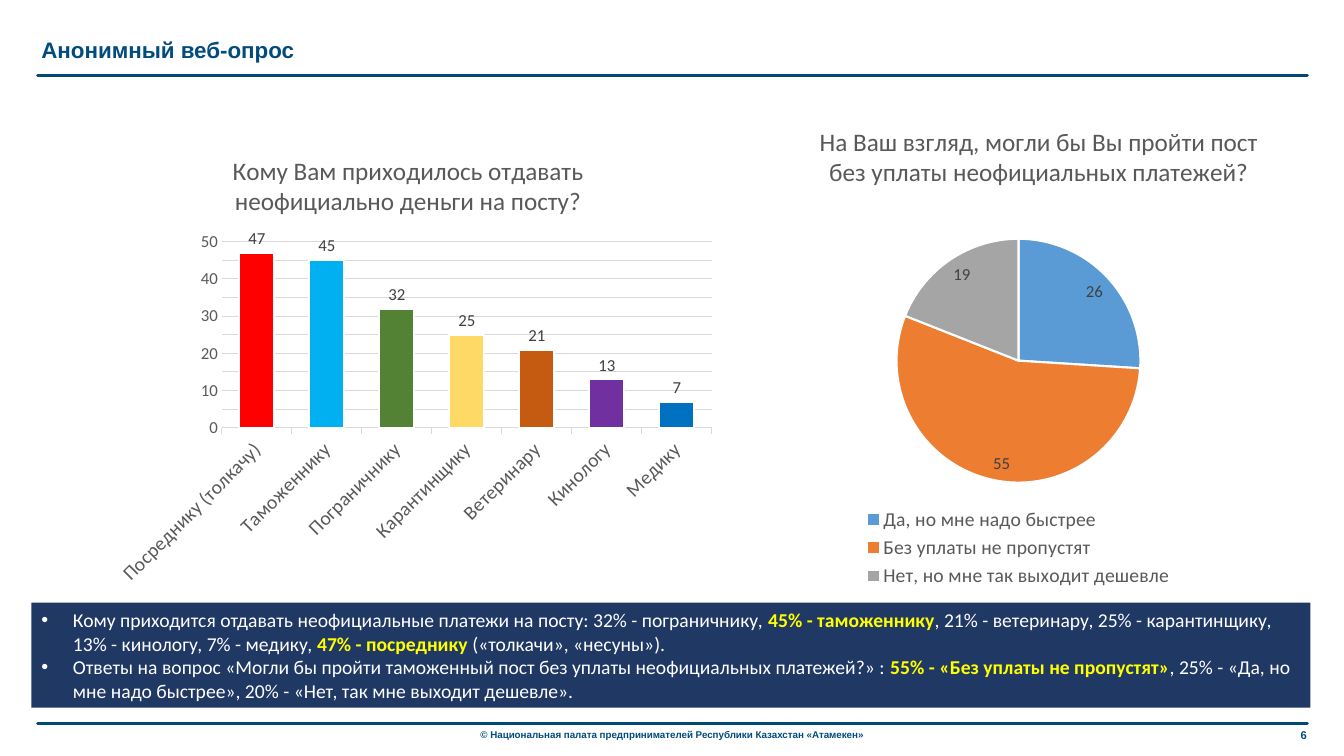
from copy import deepcopy

from lxml import etree
from pptx import Presentation
from pptx.chart.data import CategoryChartData
from pptx.dml.color import RGBColor
from pptx.enum.chart import XL_CHART_TYPE, XL_LABEL_POSITION, XL_LEGEND_POSITION, XL_TICK_MARK
from pptx.enum.shapes import MSO_CONNECTOR, MSO_SHAPE
from pptx.enum.text import MSO_ANCHOR, PP_ALIGN
from pptx.oxml.ns import qn
from pptx.util import Pt

PX = 9525
COLUMN, PIE = XL_CHART_TYPE.COLUMN_CLUSTERED, XL_CHART_TYPE.PIE
OUT_END, IN_END = XL_LABEL_POSITION.OUTSIDE_END, XL_LABEL_POSITION.INSIDE_END
BOTTOM, TICK_OUT, NO_TICK = XL_LEGEND_POSITION.BOTTOM, XL_TICK_MARK.OUTSIDE, XL_TICK_MARK.NONE
LEFT, CENTER, RIGHT = PP_ALIGN.LEFT, PP_ALIGN.CENTER, PP_ALIGN.RIGHT
STRAIGHT, RECT, MIDDLE = MSO_CONNECTOR.STRAIGHT, MSO_SHAPE.RECTANGLE, MSO_ANCHOR.MIDDLE

COLORS = {
    "rule": "004A7A", "foot": "004C7E", "head": "024C7D", "panel": "203864",
    "white": "FFFFFF", "mark": "FFFF00", "text": "595959", "label": "404040",
    "grid": "D9D9D9", "red": "FF0000", "sky": "00B0F0", "green": "548235",
    "sand": "FFD966", "rust": "C55A11", "violet": "7030A0", "blue": "0070C0",
    "azure": "5B9BD5", "orange": "ED7D31", "gray": "A5A5A5",
}
PAYEES = [
    ("Посреднику (толкачу)", 47, "red"), ("Таможеннику", 45, "sky"),
    ("Пограничнику", 32, "green"), ("Карантинщику", 25, "sand"),
    ("Ветеринару", 21, "rust"), ("Кинологу", 13, "violet"), ("Медику", 7, "blue"),
]
VIEWS = [
    ("Да, но мне надо быстрее", 26, "azure"),
    ("Без уплаты не пропустят", 55, "orange"),
    ("Нет, но мне так выходит дешевле", 19, "gray"),
]
NOTES = [
    [("Кому приходится отдавать неофициальные платежи на посту: 32% - пограничнику, ", False),
     ("45% - таможеннику", True),
     (", 21% - ветеринару, 25% - карантинщику, 13% - кинологу, 7% - медику, ", False),
     ("47% - посреднику", True), (" («толкачи», «несуны»).", False)],
    [("Ответы на вопрос «Могли бы пройти таможенный пост без уплаты неофициальных платежей?» : ", False),
     ("55% - «Без уплаты не пропустят»", True),
     (", 25% - «Да, но мне надо быстрее», 20% - «Нет, так мне выходит дешевле».", False)],
]


def tint(name):
    """Return a palette colour."""
    return RGBColor.from_string(COLORS[name])


def scale(box):
    """Turn px lengths into EMU."""
    return [n * PX for n in box]


def style(font, size, color, bold=False, name="Calibri"):
    """Set the look of a font."""
    font.name, font.size, font.bold = name, Pt(size), bold
    font.color.rgb = tint(color)


def rule(slide, box):
    """Draw a level line along the top of the box."""
    x, y, w, _ = scale(box)
    line = slide.shapes.add_connector(STRAIGHT, x, y, x + w, y)
    line.line.color.rgb = tint("rule")
    line.line.width = Pt(2.5)
    line.line._get_or_add_ln().set("cap", "rnd")
    etree.SubElement(line._element.spPr, qn("a:effectLst"))


def label(slide, box, text, size, color, align):
    """Place one bold line of text."""
    frame = slide.shapes.add_textbox(*scale(box)).text_frame
    frame.word_wrap = True
    para = frame.paragraphs[0]
    para.text, para.alignment = text, align
    style(para.runs[0].font, size, color, True, "Arial")


def header(slide, box):
    """Place the heading and its rule."""
    x, y, w, h = box
    label(slide, (x - 6, y, 842, 35), "Анонимный веб-опрос", 16, "head", LEFT)
    rule(slide, (x, y + h, w, 0))


def footer(slide, box):
    """Place the bottom rule, copyright line and page number."""
    x, y, w, h = box
    rule(slide, box)
    credit = "© Национальная палата предпринимателей Республики Казахстан «Атамекен»"
    label(slide, (x + 379, y, 450, h), credit, 7, "foot", CENTER)
    label(slide, (x + w - 59, y, 68, h), "6", 8, "rule", RIGHT)


def panel(slide, box):
    """Place the dark box with the findings."""
    shape = slide.shapes.add_shape(RECT, *scale(box))
    shape.shadow.inherit = False
    shape.fill.solid()
    shape.fill.fore_color.rgb = tint("panel")
    shape.line.fill.background()
    frame = shape.text_frame
    frame.word_wrap, frame.vertical_anchor = True, MIDDLE
    for i, note in enumerate(NOTES):
        para = frame.add_paragraph() if i else frame.paragraphs[0]
        para.alignment = LEFT
        props = para._p.get_or_add_pPr()
        props.set("marL", str(30 * PX))
        props.set("indent", str(-30 * PX))
        etree.SubElement(props, qn("a:buFont")).set("typeface", "Arial")
        etree.SubElement(props, qn("a:buChar")).set("char", "•")
        for text, key in note:
            run = para.add_run()
            run.text = text
            style(run.font, 14, "mark" if key else "white", key)


def place(node, inner=False, **spots):
    """Fix the layout of a chart part by fractions of the chart."""
    layout = node.find(qn("c:layout"))
    if layout is None:
        layout = etree.Element(qn("c:layout"))
        node.insert(0, layout)
    manual = etree.SubElement(layout, qn("c:manualLayout"))
    marks = {"layoutTarget": "inner"} if inner else {}
    marks.update(xMode="edge", yMode="edge", **spots)
    for tag, val in marks.items():
        etree.SubElement(manual, qn("c:" + tag)).set("val", str(val))


def survey(slide, box, kind, title, rows, spot, plot, end):
    """Place a titled chart with coloured points and value labels."""
    data = CategoryChartData()
    data.categories = [row[0] for row in rows]
    data.add_series("Series 1", [row[1] for row in rows])
    chart = slide.shapes.add_chart(kind, *scale(box), data).chart
    chart.font.name, chart.font.size = "Calibri", Pt(10)
    chart.has_legend = False
    head = chart.chart_title
    head.text_frame.text = title
    style(head.text_frame.paragraphs[0].runs[0].font, 18, "text")
    place(head._element, x=spot[0], y=spot[1])
    place(chart._chartSpace.chart.plotArea, True, **dict(zip("xywh", plot)))
    body = chart.plots[0]
    body.vary_by_categories = kind == PIE
    body.has_data_labels = True
    tags = body.data_labels
    tags.show_value, tags.show_percentage, tags.position = True, False, end
    style(tags.font, 12, "label")
    for i, row in enumerate(rows):
        form = body.series[0].points[i].format
        form.fill.solid()
        form.fill.fore_color.rgb = tint(row[2])
        form.line.color.rgb = tint("white")
        form.line.width = Pt(1.5)
    return chart


def columns(slide, box):
    """Place the column chart of payees."""
    chart = survey(slide, box, COLUMN,
                   "Кому Вам приходилось отдавать неофициально деньги на посту?",
                   PAYEES, (0.2, 0.05), (0.19, 0.25, 0.79, 0.4), OUT_END)
    chart.plots[0].gap_width = 100
    cat, val = chart.category_axis, chart.value_axis
    style(cat.tick_labels.font, 14, "text")
    cat._element.find(qn("c:txPr")).find(qn("a:bodyPr")).set("rot", "-2700000")
    cat.major_tick_mark = TICK_OUT
    cat.format.line.color.rgb = tint("grid")
    style(val.tick_labels.font, 12, "text")
    val.minimum_scale, val.maximum_scale = 0, 50
    val.major_unit, val.minor_unit = 10, 5
    val.major_tick_mark = NO_TICK
    val.format.line.fill.background()
    val.has_major_gridlines = val.has_minor_gridlines = True
    grid = val.major_gridlines.format.line
    grid.color.rgb, grid.width = tint("grid"), Pt(0.75)
    major, minor = [val._element.find(qn(f"c:{size}Gridlines")) for size in ("major", "minor")]
    minor.append(deepcopy(major[0]))


def pie(slide, box):
    """Place the pie chart of views with its legend."""
    chart = survey(slide, box, PIE,
                   "На Ваш взгляд, могли бы Вы пройти пост без уплаты неофициальных платежей?",
                   VIEWS, (0.14, 0.05), (0.28, 0.29, 0.44, 0.49), IN_END)
    chart.has_legend = True
    chart.legend.position, chart.legend.include_in_layout = BOTTOM, False
    style(chart.legend.font, 14, "text")


def main():
    """Build the slide and save it."""
    deck = Presentation()
    deck.slide_width, deck.slide_height = scale((1280, 720))
    slide = deck.slides.add_slide(deck.slide_layouts[6])
    header(slide, (36, 30, 1209, 42))
    columns(slide, (99, 119, 591, 444))
    pie(slide, (701, 90, 538, 474))
    panel(slide, (30, 574, 1218, 100))
    footer(slide, (36, 689, 1209, 22))
    deck.save("out.pptx")


if __name__ == "__main__":
    main()
